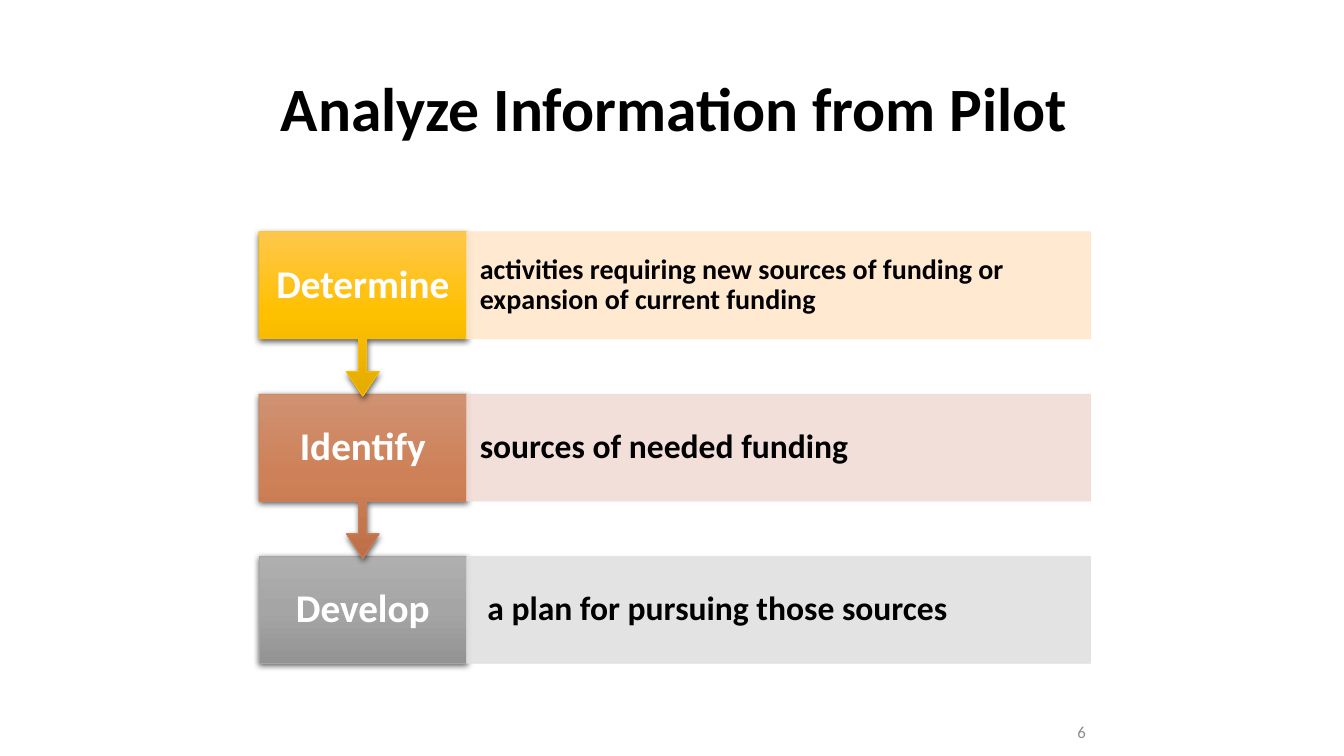
import dataclasses

import lxml.etree
import pptx
import pptx.dml.color
import pptx.enum.shapes
import pptx.enum.text
import pptx.oxml
import pptx.oxml.ns
import pptx.util

Pt = pptx.util.Pt
Shape = pptx.enum.shapes.MSO_SHAPE
Align = pptx.enum.text.PP_ALIGN


@dataclasses.dataclass(frozen=True)
class Theme:
    font: str = "Calibri"
    ink: str = "000000"
    label_ink: str = "FFFFFF"
    number_ink: str = "8C8C8C"
    title_size: int = 44
    label_size: int = 28
    panel_size: int = 24
    small_panel_size: int = 20
    number_size: int = 12
    gold: tuple = ("FFC74B", "FFC000", "E3AB00")
    copper: tuple = ("CF9272", "CE8056", "BD7047")
    gray: tuple = ("AFAFAF", "A5A5A5", "939393")
    pale_gold: str = "FFE7CB"
    pale_copper: str = "F1DCD5"
    pale_gray: str = "E1E1E1"


THEME = Theme()
LEFT = 185
TOP = 165.6
LABEL_WIDTH = 148.3
PANEL_WIDTH = 445.7
ROW_HEIGHT = 76.4
ROW_STEP = 115.9
CALLOUT_HEIGHT = 117.5


def color(value):
    return pptx.dml.color.RGBColor.from_string(value)


def drawing_xml(tag, content, attributes=""):
    namespace = pptx.oxml.ns.nsdecls("a")
    return pptx.oxml.parse_xml(f"<a:{tag} {namespace} {attributes}>{content}</a:{tag}>")


def write(shape, spans, size, ink, align, margin, spacing=0.9):
    frame = shape.text_frame
    frame.word_wrap = True
    frame.auto_size = pptx.enum.text.MSO_AUTO_SIZE.NONE
    frame.vertical_anchor = pptx.enum.text.MSO_ANCHOR.MIDDLE
    frame.margin_left = frame.margin_right = Pt(margin)
    frame.margin_top = frame.margin_bottom = Pt(3.6)
    para = frame.paragraphs[0]
    para.alignment = align
    para.line_spacing = spacing
    for text, bold in spans:
        span = para.add_run()
        span.text = text
        span.font.name = THEME.font
        span.font.size = Pt(size)
        span.font.bold = bold
        span.font.color.rgb = color(ink)


def add_block(page, kind, left, top, width, height, outline):
    block = page.shapes.add_shape(kind, Pt(left), Pt(top), Pt(width), Pt(height))
    block.shadow.inherit = False
    block.line.color.rgb = color(outline)
    block.line.width = Pt(0.5)
    return block


def shade(block, colors):
    stops = "".join(
        f'<a:gs pos="{index * 50000}"><a:srgbClr val="{value}"/></a:gs>'
        for index, value in enumerate(colors)
    )
    properties = block.element.spPr
    gradient = drawing_xml(
        "gradFill", f'<a:gsLst>{stops}</a:gsLst><a:lin ang="5400000" scaled="0"/>'
    )
    properties.find(pptx.oxml.ns.qn("a:ln")).addprevious(gradient)
    shadow = drawing_xml(
        "outerShdw",
        '<a:srgbClr val="000000"><a:alpha val="63000"/></a:srgbClr>',
        'blurRad="57150" dist="19050" dir="5400000" algn="ctr" rotWithShape="0"',
    )
    properties.find(pptx.oxml.ns.qn("a:effectLst")).append(shadow)


def add_label(page, text, top, colors, has_arrow):
    kind = Shape.DOWN_ARROW_CALLOUT if has_arrow else Shape.RECTANGLE
    height = CALLOUT_HEIGHT if has_arrow else ROW_HEIGHT
    label = add_block(page, kind, LEFT, top, LABEL_WIDTH, height, colors[1])
    if has_arrow:
        for index, value in enumerate((0.05, 0.1, 0.15, 0.65)):
            label.adjustments[index] = value
    shade(label, colors)
    write(label, [(text, True)], THEME.label_size, THEME.label_ink, Align.CENTER, 10.7)


def add_panel(page, spans, size, top, tint):
    panel = add_block(
        page, Shape.RECTANGLE, LEFT + LABEL_WIDTH, top, PANEL_WIDTH, ROW_HEIGHT, tint
    )
    panel.fill.solid()
    panel.fill.fore_color.rgb = color(tint)
    for paint in panel.element.spPr.iter(pptx.oxml.ns.qn("a:srgbClr")):
        lxml.etree.SubElement(paint, pptx.oxml.ns.qn("a:alpha"), val="90000")
    write(panel, spans, size, THEME.ink, Align.LEFT, 9.4)


def add_title(page, text):
    title = page.shapes.title
    title.left, title.top = Pt(LEFT), Pt(22.5)
    title.width, title.height = Pt(LABEL_WIDTH + PANEL_WIDTH), Pt(114.5)
    write(title, [(text, True)], THEME.title_size, THEME.ink, Align.CENTER, 7.2)


def add_page_number(page, text):
    box = page.shapes.add_textbox(Pt(704.9), Pt(508.3), Pt(77.8), Pt(28.8))
    write(box, [(text, False)], THEME.number_size, THEME.number_ink, Align.RIGHT, 7.2, 1)


def main():
    deck = pptx.Presentation()
    deck.slide_width, deck.slide_height = Pt(960), Pt(540)
    page = deck.slides.add_slide(deck.slide_layouts[5])
    add_title(page, "Analyze Information from Pilot")
    steps = [
        ("Determine", THEME.gold, THEME.pale_gold, THEME.small_panel_size,
         [("activities requiring new sources of funding or expansion of current funding", True)]),
        ("Identify", THEME.copper, THEME.pale_copper, THEME.panel_size,
         [("sources of needed funding", True)]),
        ("Develop", THEME.gray, THEME.pale_gray, THEME.panel_size,
         [(" ", False), ("a plan for pursuing those sources", True)]),
    ]
    last = len(steps) - 1
    for index in range(last, -1, -1):
        name, colors, tint, size, spans = steps[index]
        top = TOP + index * ROW_STEP
        add_label(page, name, top, colors, index < last)
        add_panel(page, spans, size, top, tint)
    add_page_number(page, "6")
    deck.save("out.pptx")


if __name__ == "__main__":
    main()
